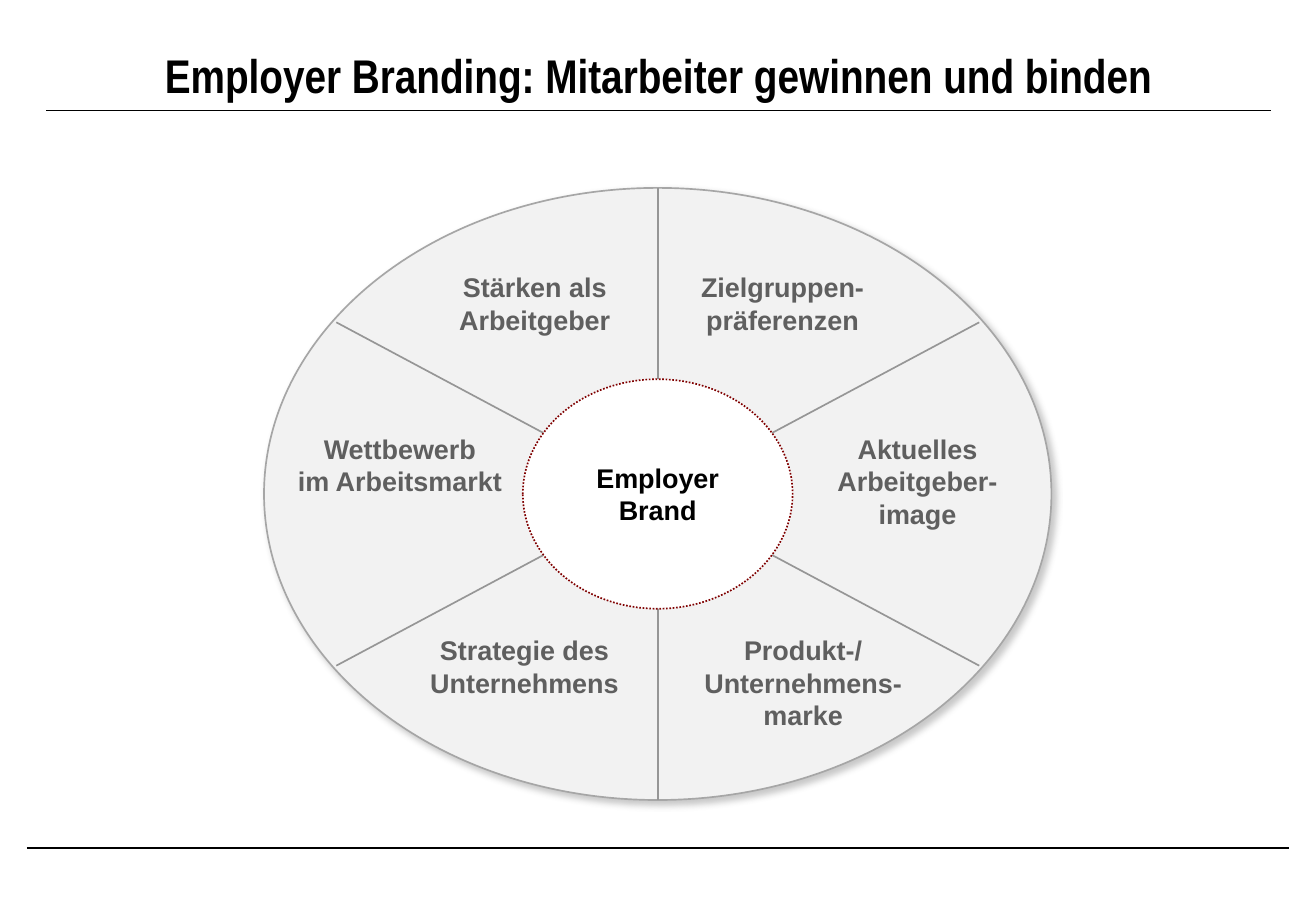
from lxml.etree import SubElement
from pptx import Presentation
from pptx.dml.color import RGBColor
from pptx.enum.dml import MSO_LINE
from pptx.enum.shapes import MSO_CONNECTOR, MSO_SHAPE
from pptx.enum.text import MSO_ANCHOR, PP_ALIGN
from pptx.oxml.ns import qn
from pptx.util import Cm, Pt

# Content: lengths in cm
TITLE = "Employer Branding: Mitarbeiter gewinnen und binden"
HUB_TEXT = "Employer\nBrand"
SEGMENTS = [  # lines, left, top, width, height
    (("Stärken als", "Arbeitgeber"), 8.79, 5.54, 4.78, 1.63),
    (("Zielgruppen-", "präferenzen"), 13.97, 5.54, 4.78, 1.63),
    (("Wettbewerb", "im Arbeitsmarkt"), 5.54, 8.92, 5.64, 1.63),
    (("Aktuelles", "Arbeitgeber-", "image"), 16.79, 8.92, 4.78, 2.31),
    (("Strategie des Unternehmens",), 8.26, 13.13, 5.41, 1.63),
    (("Produkt-/", "Unternehmens-", "marke"), 13.54, 13.13, 6.5, 2.31),
]
RULES = [(0.97, 26.57, 2.31), (0.56, 26.95, 17.73)]  # left, right, y
CENTER = (13.75, 10.33)
WHEEL = (16.46, 12.8)
HUB = (5.64, 4.8)
SPOKES = [(6.72, 3.59), (0, 6.4), (6.72, -3.59)]  # half extents
COLORS = {
    "black": "000000", "wheel": "F2F2F2", "rim": "A6A6A6", "spoke": "969696",
    "label": "5F5F5F", "hub": "FFFFFF", "hub_rim": "800000", "shadow": "808080",
}


def color(name):
    return RGBColor.from_string(COLORS[name])


def add_line(slide, x1, y1, x2, y2, color_name):
    line = slide.shapes.add_connector(
        MSO_CONNECTOR.STRAIGHT, Cm(x1), Cm(y1), Cm(x2), Cm(y2))
    line.line.color.rgb = color(color_name)
    line.line.width = Pt(1)
    SubElement(line._element.spPr, qn("a:effectLst"))


def add_ellipse(slide, size, fill, rim):
    (x, y), (width, height) = CENTER, size
    ellipse = slide.shapes.add_shape(
        MSO_SHAPE.OVAL, Cm(x - width / 2), Cm(y - height / 2), Cm(width), Cm(height))
    ellipse.shadow.inherit = False
    ellipse.fill.solid()
    ellipse.fill.fore_color.rgb = color(fill)
    ellipse.line.color.rgb = color(rim)
    ellipse.line.width = Pt(1)
    return ellipse


def add_shadow(shape):
    effects = shape._element.spPr.find(qn("a:effectLst"))
    shadow = SubElement(effects, qn("a:outerShdw"), blurRad=str(Pt(4)), dist=str(Pt(3)),
                        dir=str(45 * 60000), algn="tl", rotWithShape="0")
    shade = SubElement(shadow, qn("a:srgbClr"), val=COLORS["shadow"])
    SubElement(shade, qn("a:alpha"), val="43000")


def set_text(shape, text, size, color_name, font="Arial"):
    frame = shape.text_frame
    frame.word_wrap = True
    frame.text = text
    for paragraph in frame.paragraphs:
        paragraph.alignment = PP_ALIGN.CENTER
        for run in paragraph.runs:
            run.font.name = font
            run.font.size = Pt(size)
            run.font.bold = True
            run.font.color.rgb = color(color_name)
    return frame


def add_text(slide, left, top, width, height, *text_style):
    box = slide.shapes.add_textbox(Cm(left), Cm(top), Cm(width), Cm(height))
    return set_text(box, *text_style)


def main():
    presentation = Presentation()
    presentation.slide_width = Cm(27.51)
    presentation.slide_height = Cm(19.05)
    slide = presentation.slides.add_slide(presentation.slide_layouts[6])

    # Title and rules
    for left, right, y in RULES:
        add_line(slide, left, y, right, y, "black")
    title = add_text(slide, 0.36, 0.91, 26.8, 1.4, TITLE, 28, "black", "Arial Narrow")
    title.vertical_anchor = MSO_ANCHOR.MIDDLE
    title.paragraphs[0].line_spacing = 0.95

    # Wheel with spokes
    add_shadow(add_ellipse(slide, WHEEL, "wheel", "rim"))
    x, y = CENTER
    for dx, dy in SPOKES:
        add_line(slide, x - dx, y - dy, x + dx, y + dy, "spoke")

    # Hub
    hub = add_ellipse(slide, HUB, "hub", "hub_rim")
    hub.line.dash_style = MSO_LINE.ROUND_DOT
    frame = set_text(hub, HUB_TEXT, 16, "black")
    frame.vertical_anchor = MSO_ANCHOR.MIDDLE
    frame.margin_left = frame.margin_right = 0

    # Segment labels, with line breaks inside one paragraph
    for lines, *place in SEGMENTS:
        add_text(slide, *place, "\v".join(lines), 16, "label")

    presentation.save("out.pptx")


if __name__ == "__main__":
    main()
